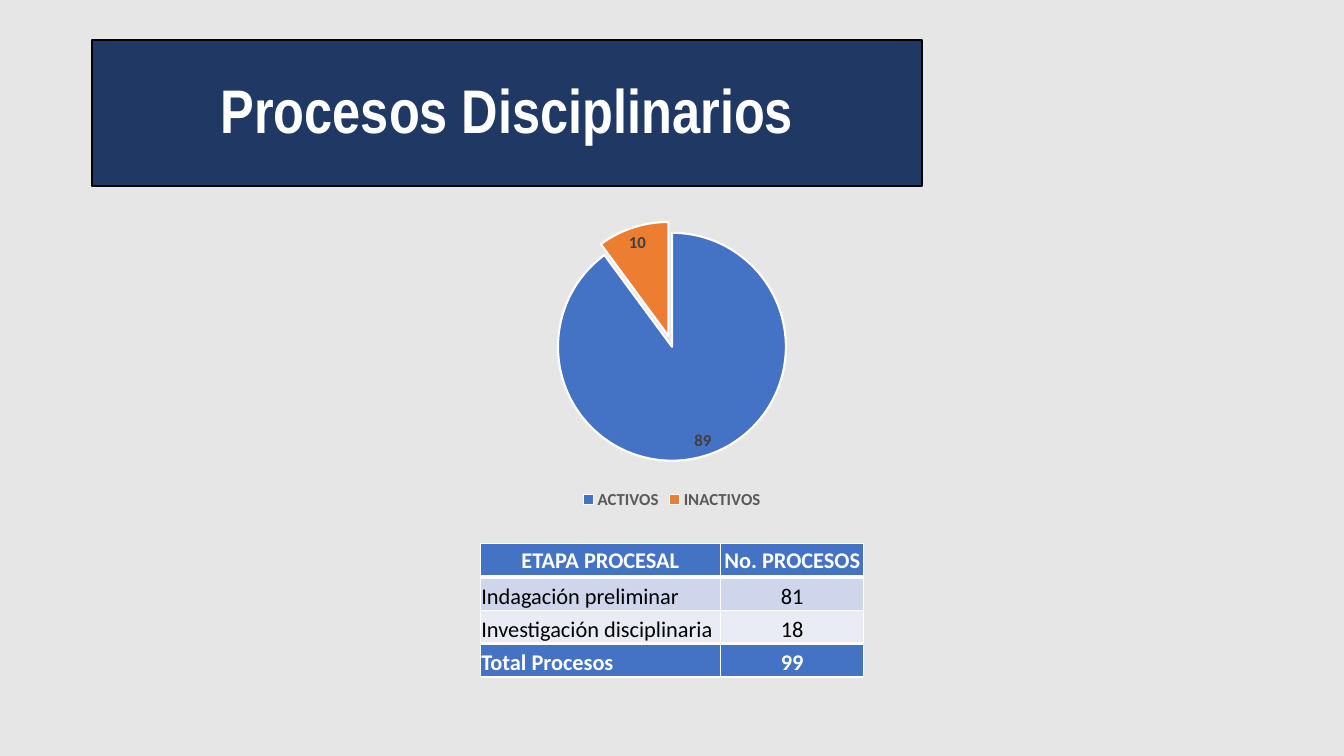
from dataclasses import dataclass

from lxml.etree import SubElement
from pptx import Presentation
from pptx.chart.data import CategoryChartData
from pptx.dml.color import RGBColor
from pptx.enum.chart import XL_CHART_TYPE, XL_LABEL_POSITION, XL_LEGEND_POSITION
from pptx.enum.shapes import MSO_SHAPE
from pptx.enum.text import MSO_ANCHOR, PP_ALIGN
from pptx.oxml import parse_xml
from pptx.oxml.ns import nsdecls, qn
from pptx.util import Cm, Pt


@dataclass(frozen=True)
class Theme:
    """Colours, fonts and type sizes of the slide."""
    background: str = "E7E6E6"
    navy: str = "203864"
    blue: str = "4472C4"
    orange: str = "ED7D31"
    band_dark: str = "CFD5EA"
    band_light: str = "E9EBF5"
    white: str = "FFFFFF"
    black: str = "000000"
    legend_gray: str = "595959"
    label_gray: str = "404040"
    heading_font: str = "Arial Narrow"
    body_font: str = "Calibri"
    title_size: int = 44
    chart_size: int = 12
    table_size: int = 16


THEME = Theme()
STATUS = {"ACTIVOS": 89, "INACTIVOS": 10}
STAGES = [
    ("ETAPA PROCESAL", "No. PROCESOS"),
    ("Indagación preliminar", "81"),
    ("Investigación disciplinaria", "18"),
    ("Total Procesos", "99"),
]


def paint(fill, color):
    """Make a fill solid in the given colour."""
    fill.solid()
    fill.fore_color.rgb = RGBColor.from_string(color)


def style_font(font, name, size, color, bold=True):
    """Set face, size, colour and weight of a font."""
    font.name, font.size, font.bold = name, Pt(size), bold
    font.color.rgb = RGBColor.from_string(color)


def add_banner(slide, left, top, width, height):
    """Place the title banner in its box."""
    banner = slide.shapes.add_shape(MSO_SHAPE.RECTANGLE, left, top, width, height)
    banner.shadow.inherit = False
    paint(banner.fill, THEME.navy)
    paint(banner.line.fill, THEME.black)
    banner.line.width = Pt(1.5)
    banner.text_frame.vertical_anchor = MSO_ANCHOR.MIDDLE
    heading = banner.text_frame.paragraphs[0]
    heading.text = "Procesos Disciplinarios"
    heading.alignment = PP_ALIGN.CENTER
    heading.line_spacing = 0.9
    style_font(heading.font, THEME.heading_font, THEME.title_size, THEME.white)


def set_plot_area(chart, **fractions):
    """Fix the inner plot area as fractions of the chart."""
    plot_area = chart.element.find(".//" + qn("c:plotArea"))
    layout = parse_xml(f"<c:layout {nsdecls('c')}/>")
    manual = SubElement(layout, qn("c:manualLayout"))
    settings = {"layoutTarget": "inner", "xMode": "edge", "yMode": "edge", **fractions}
    for tag, value in settings.items():
        SubElement(manual, qn(f"c:{tag}")).set("val", str(value))
    for earlier in plot_area.findall(qn("c:layout")):
        plot_area.remove(earlier)
    plot_area.insert(0, layout)


def add_status_pie(slide, left, top, width, height):
    """Place the pie of active and inactive cases in its box."""
    status = CategoryChartData()
    status.categories = list(STATUS)
    status.add_series("Procesos", list(STATUS.values()))
    chart = slide.shapes.add_chart(
        XL_CHART_TYPE.PIE, left, top, width, height, status).chart
    chart.has_title = False
    style_font(chart.font, THEME.body_font, THEME.chart_size, THEME.black, False)
    set_plot_area(chart, x=0.04, y=0.1, w=0.92, h=0.73)

    chart.has_legend = True
    chart.legend.position = XL_LEGEND_POSITION.BOTTOM
    chart.legend.include_in_layout = False
    style_font(chart.legend.font, THEME.body_font, THEME.chart_size, THEME.legend_gray)

    pie = chart.plots[0]
    pie.vary_by_categories = True
    for index, color in enumerate((THEME.blue, THEME.orange)):
        wedge = pie.series[0].points[index].format
        paint(wedge.fill, color)
        paint(wedge.line.fill, THEME.white)
        wedge.line.width = Pt(1.5)
    inactive = chart.element.findall(".//" + qn("c:dPt"))[1]
    inactive.find(qn("c:spPr")).addprevious(
        parse_xml(f'<c:explosion {nsdecls("c")} val="10"/>'))

    labels = pie.series[0].data_labels
    labels.show_value = True
    labels.position = XL_LABEL_POSITION.BEST_FIT
    style_font(labels.font, THEME.body_font, THEME.chart_size, THEME.label_gray)


def set_borders(cell, top, bottom):
    """Draw white cell borders, with top and bottom widths in points."""
    properties = cell._tc.get_or_add_tcPr()
    widths = {"lnL": 1, "lnR": 1, "lnT": top, "lnB": bottom}
    for index, (edge, width) in enumerate(widths.items()):
        properties.insert(index, parse_xml(
            f'<a:{edge} {nsdecls("a")} w="{Pt(width)}"><a:solidFill>'
            f'<a:srgbClr val="{THEME.white}"/></a:solidFill></a:{edge}>'))


def add_stage_table(slide, left, top, width, height):
    """Place the table of cases by stage in its box."""
    table = slide.shapes.add_table(
        len(STAGES), len(STAGES[0]), left, top, width, height).table
    table.columns[0].width = Cm(6.06)
    table.columns[1].width = width - Cm(6.06)
    fills = (THEME.blue, THEME.band_dark, THEME.band_light, THEME.blue)
    last = len(STAGES) - 1
    for row, stage in enumerate(STAGES):
        strong = row in (0, last)
        for column, wording in enumerate(stage):
            cell = table.cell(row, column)
            paint(cell.fill, fills[row])
            set_borders(cell, 3 if row in (1, last) else 1,
                        3 if row in (0, last - 1) else 1)
            cell.margin_left = cell.margin_right = cell.margin_top = Cm(0.03)
            cell.margin_bottom = 0
            cell.vertical_anchor = MSO_ANCHOR.BOTTOM if row else MSO_ANCHOR.MIDDLE
            entry = cell.text_frame.paragraphs[0]
            entry.text = wording
            centred = column or not row
            entry.alignment = PP_ALIGN.CENTER if centred else PP_ALIGN.LEFT
            style_font(entry.font, THEME.body_font, THEME.table_size,
                       THEME.white if strong else THEME.black, strong)


def main():
    """Build and save the slide."""
    deck = Presentation()
    deck.slide_width, deck.slide_height = Cm(33.87), Cm(19.05)
    slide = deck.slides.add_slide(deck.slide_layouts[6])
    paint(slide.background.fill, THEME.background)
    add_banner(slide, Cm(2.33), Cm(1.01), Cm(20.91), Cm(3.68))
    add_status_pie(slide, Cm(2.33), Cm(5.08), Cm(29.21), Cm(7.87))
    add_stage_table(slide, Cm(12.1), Cm(13.69), Cm(9.67), Cm(3.37))
    deck.save("out.pptx")


if __name__ == "__main__":
    main()
